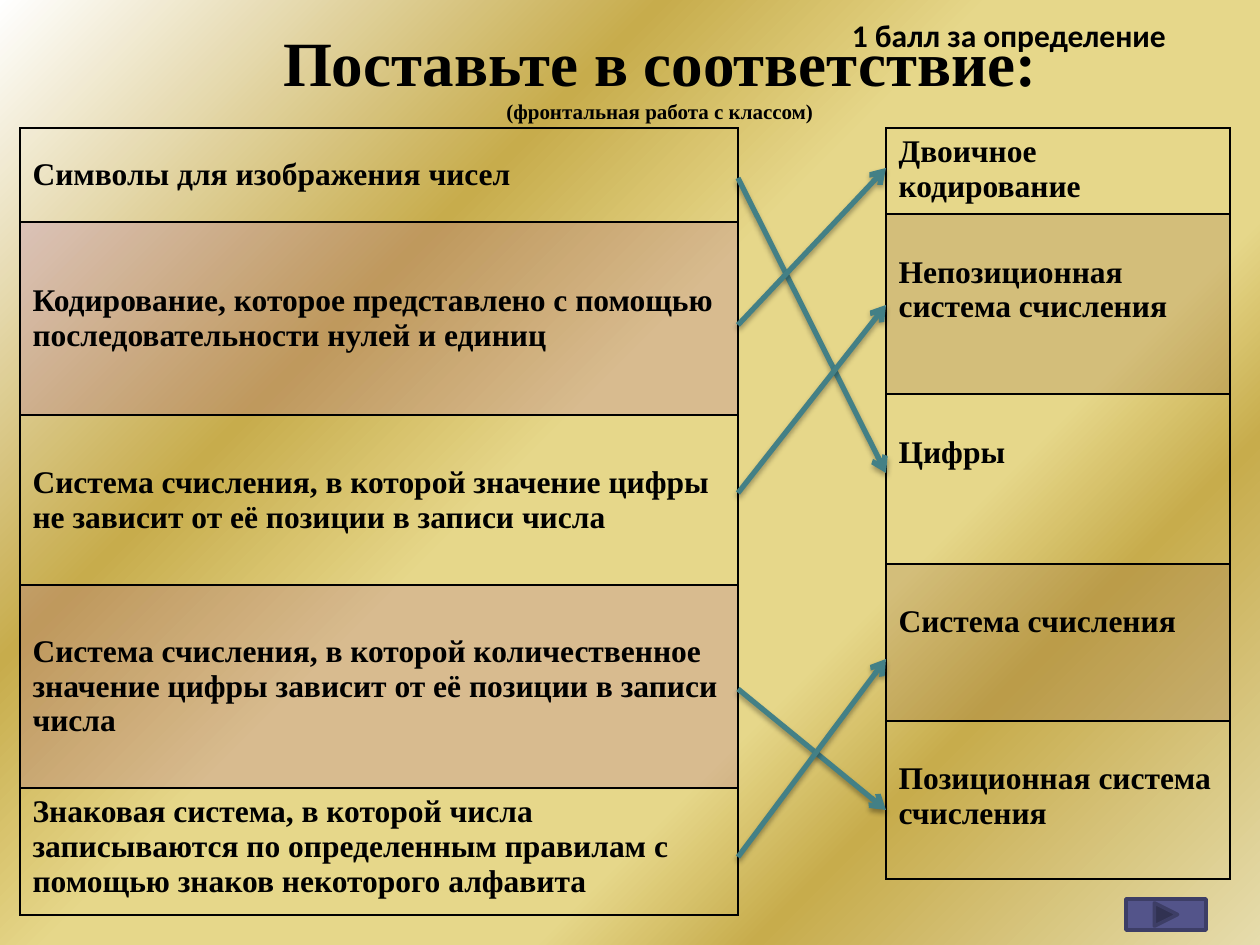
from pptx import Presentation
from pptx.dml.color import RGBColor
from pptx.enum.shapes import MSO_CONNECTOR, MSO_SHAPE
from pptx.enum.text import MSO_ANCHOR, MSO_AUTO_SIZE, PP_ALIGN
from pptx.oxml import parse_xml
from pptx.oxml.ns import nsdecls, qn
from pptx.util import Pt
from lxml.etree import SubElement

# Content: (text, row height in px)
TITLE = [("Поставьте в соответствие:", "title"),
         ("(фронтальная работа с классом)", "note")]
SCORE = "1 балл за определение"
DEFINITIONS = [
    ("Символы для изображения чисел", 94),
    ("Кодирование, которое представлено с помощью последовательности нулей и единиц", 193),
    ("Система счисления, в которой значение цифры не зависит от её позиции в записи числа", 170),
    ("Система счисления, в которой количественное значение цифры зависит от её позиции "
     "в записи числа", 203),
    ("Знаковая система, в которой числа записываются по определенным правилам с помощью "
     "знаков некоторого алфавита", 127),
]
TERMS = [
    ("Двоичное кодирование", 86),
    ("Непозиционная система счисления", 180),
    ("Цифры", 170),
    ("Система счисления", 157),
    ("Позиционная система счисления", 158),
]
# Arrow heights in px: definition side, term side
MATCHES = [(178, 473), (325, 168), (493, 305), (689, 810), (857, 659)]

THEME = {
    "serif": "Times New Roman", "sans": "Calibri",
    "title": 36, "body": 18, "note": 12,
    "text": "000000", "border": "000000", "arrow": "438086",
    "definition": "A04DA3", "term": "8B5D3D",
    "button": "53548A", "button_line": "3D3E66",
    "background": [(0, "FFFFFF"), (30, "C7AC4C"), (45, "E6D78A"),
                   (67, "E6D78A"), (77, "C7AC4C"), (100, "E6DCAC")],
}
EMU_PER_PX = 914400 / 126
TABLE_TOP = 128
LEFT_X, LEFT_W = 20, 718
RIGHT_X, RIGHT_W = 886, 344
CELL_TOP, LINE_HEIGHT = 6, 35


def px(n):
    return round(n * EMU_PER_PX)


def box(*lengths):
    return [px(n) for n in lengths]


def rgb(name):
    return RGBColor.from_string(THEME[name])


def add_text(p, text, size="body", font="serif"):
    r = p.add_run()
    r.text = text
    r.font.name = THEME[font]
    r.font.size = Pt(THEME[size])
    r.font.bold = True
    r.font.color.rgb = rgb("text")


def setup_frame(tf):
    tf.word_wrap = True
    tf.auto_size = MSO_AUTO_SIZE.NONE
    tf.vertical_anchor = MSO_ANCHOR.MIDDLE


def set_background(slide):
    stops = "".join(f'<a:gs pos="{pos * 1000}"><a:srgbClr val="{color}"/></a:gs>'
                    for pos, color in THEME["background"])
    bg = parse_xml(f'<p:bg {nsdecls("p", "a")}><p:bgPr><a:gradFill rotWithShape="1">'
                   f'<a:gsLst>{stops}</a:gsLst><a:lin ang="2700000" scaled="0"/>'
                   '</a:gradFill><a:effectLst/></p:bgPr></p:bg>')
    slide.element.cSld.insert(0, bg)


def style_cell(cell, tint):
    tc_pr = cell._tc.get_or_add_tcPr()
    if tint:
        cell.fill.solid()
        cell.fill.fore_color.rgb = rgb(tint)
        SubElement(tc_pr.find(".//" + qn("a:srgbClr")), qn("a:alpha"), val="20000")
    else:
        cell.fill.background()
    for i, side in enumerate("LRTB"):
        tc_pr.insert(i, parse_xml(
            f'<a:ln{side} {nsdecls("a")} w="12700"><a:solidFill>'
            f'<a:srgbClr val="{THEME["border"]}"/></a:solidFill></a:ln{side}>'))


def add_column(slide, x, width, rows, tint):
    height = sum(h for _, h in rows)
    table = slide.shapes.add_table(len(rows), 1, *box(x, TABLE_TOP, width, height)).table
    table.first_row = table.horz_banding = False
    for i, (text, h) in enumerate(rows):
        table.rows[i].height = px(h)
        cell = table.cell(i, 0)
        style_cell(cell, tint if i % 2 else None)
        add_text(cell.text_frame.paragraphs[0], text)
    return [table.cell(i, 0) for i in range(len(rows))]


def add_arrow(slide, start, end):
    line = slide.shapes.add_connector(MSO_CONNECTOR.STRAIGHT,
                                      *box(LEFT_X + LEFT_W, start, RIGHT_X, end))
    line.line.color.rgb = rgb("arrow")
    line.line.width = Pt(3)
    sp_pr = line._element.spPr
    SubElement(sp_pr.find(qn("a:ln")), qn("a:tailEnd"), type="arrow")
    sp_pr.append(parse_xml(
        f'<a:effectLst {nsdecls("a")}><a:outerShdw blurRad="{Pt(3.1)}" dist="{Pt(1.8)}" '
        'dir="5400000" rotWithShape="0"><a:srgbClr val="000000"><a:alpha val="35000"/>'
        '</a:srgbClr></a:outerShdw></a:effectLst>'))


def main():
    prs = Presentation()
    prs.slide_width, prs.slide_height = box(1260, 945)
    slide = prs.slides.add_slide(prs.slide_layouts[5])
    set_background(slide)

    # Title
    title = slide.shapes.title
    title.left, title.top, title.width, title.height = box(207, 34, 906, 79)
    tf = title.text_frame
    setup_frame(tf)
    for i, (text, size) in enumerate(TITLE):
        p = tf.add_paragraph() if i else tf.paragraphs[0]
        p.alignment = PP_ALIGN.CENTER
        add_text(p, text, size)

    # Two columns to be matched
    for cell in add_column(slide, LEFT_X, LEFT_W, DEFINITIONS, "definition")[:-1]:
        cell.vertical_anchor = MSO_ANCHOR.MIDDLE
    for cell in add_column(slide, RIGHT_X, RIGHT_W, TERMS, "term")[1:]:
        cell.margin_top = px(CELL_TOP + LINE_HEIGHT)

    # Answers
    for start, end in MATCHES:
        add_arrow(slide, start, end)

    # Score note
    tf = slide.shapes.add_textbox(*box(758, 0, 502, 69)).text_frame
    setup_frame(tf)
    tf.paragraphs[0].alignment = PP_ALIGN.CENTER
    add_text(tf.paragraphs[0], SCORE, font="sans")

    # Next button
    sp = slide.shapes.add_shape(MSO_SHAPE.ACTION_BUTTON_FORWARD_OR_NEXT,
                                *box(1126, 899, 80, 31))
    sp.shadow.inherit = False
    sp.fill.solid()
    sp.fill.fore_color.rgb = rgb("button")
    sp.line.color.rgb = rgb("button_line")
    sp.line.width = Pt(2)

    prs.save("out.pptx")


if __name__ == "__main__":
    main()
